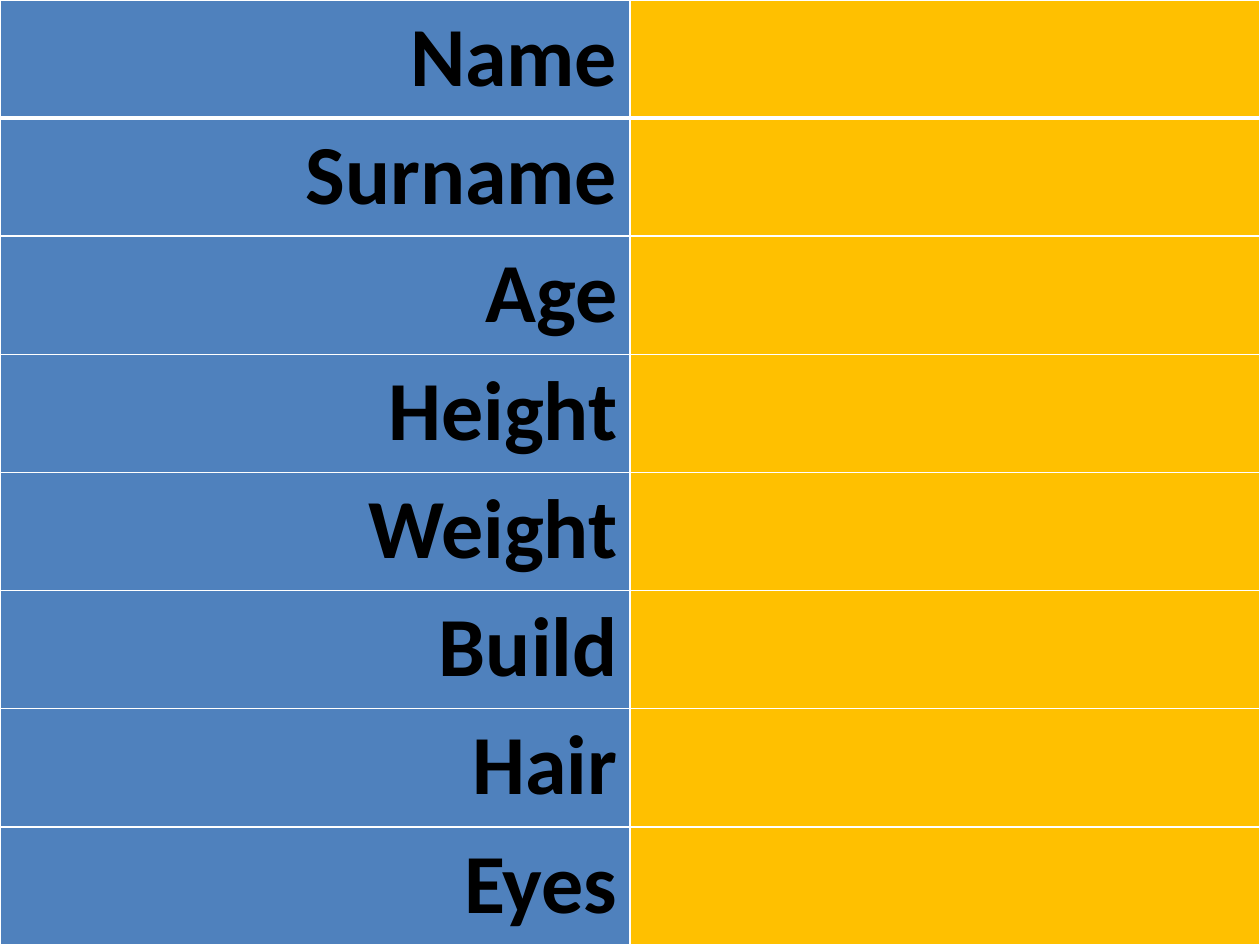
from lxml import etree
from pptx import Presentation
from pptx.dml.color import RGBColor
from pptx.enum import text
from pptx.oxml.ns import qn
from pptx.util import Cm, Pt

LABELS = ["Name", "Surname", "Age", "Height", "Weight", "Build", "Hair", "Eyes"]
FILLS = ["4F81BD", "FFC000"]  # label column, answer column
WIDE, HIGH = 25.4, 19.05


def color(code):
    return RGBColor.from_string(code)


def write(cell, words, size=48, font="Calibri", tint="000000", bold=True,
          align=text.PP_ALIGN.RIGHT):
    par = cell.text_frame.paragraphs[0]
    par.alignment = align
    run = par.add_run()
    run.text = words
    run.font.size, run.font.name, run.font.bold = Pt(size), font, bold
    run.font.color.rgb = color(tint)


def border(cell, tint="FFFFFF", **sides):
    """Draw the sides L, R, T, B, each given as a width in points."""
    props = cell._tc.get_or_add_tcPr()
    for spot, (side, width) in enumerate(sides.items()):
        line = etree.Element(qn("a:ln" + side), w=str(Pt(width)))
        fill = etree.SubElement(line, qn("a:solidFill"))
        etree.SubElement(fill, qn("a:srgbClr"), val=tint)
        props.insert(spot, line)  # borders come before the fill


def main():
    deck = Presentation()
    deck.slide_width, deck.slide_height = Cm(WIDE), Cm(HIGH)
    slide = deck.slides.add_slide(deck.slide_layouts[6])
    table = slide.shapes.add_table(len(LABELS), len(FILLS), 0, 0,
                                   Cm(WIDE), Cm(HIGH)).table
    table.horz_banding = False
    for row, label in enumerate(LABELS):
        write(table.cell(row, 0), label)
        for col, fill in enumerate(FILLS):
            cell = table.cell(row, col)
            cell.fill.solid()
            cell.fill.fore_color.rgb = color(fill)
            border(cell, L=1, R=1, T=1, B=3 if row == 0 else 1)
    deck.save("out.pptx")


if __name__ == "__main__":
    main()
